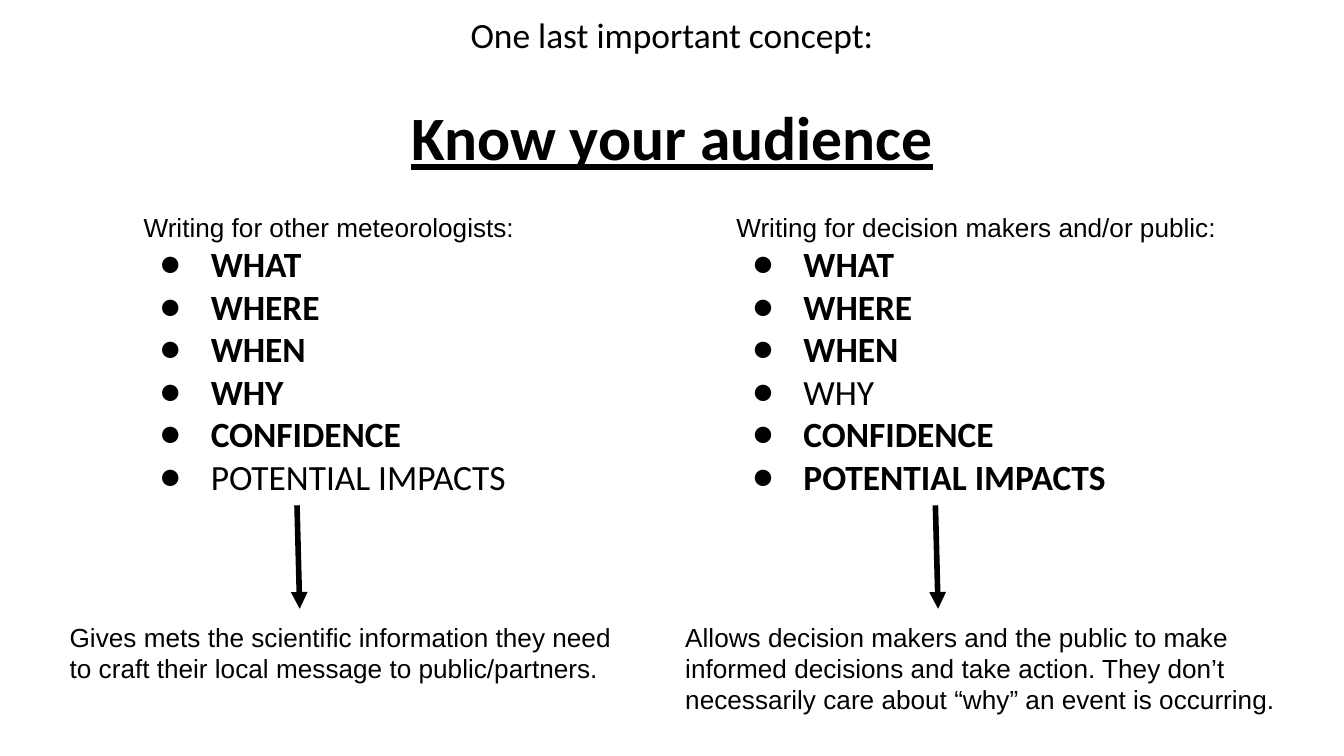
from lxml import etree
from pptx import Presentation
from pptx import util as u
from pptx.dml.color import RGBColor
from pptx.enum import shapes, text
from pptx.oxml.ns import qn

PX = 9144  # EMU per px, 100 px to the inch
SLIDE_W = 1000
BLACK = "000000"
BODY = dict(name="Arial", size=u.Pt(14), bold=False)
ITEM = dict(name="Calibri", size=u.Pt(19))
HEADLINE = dict(name="Calibri", size=u.Pt(33), bold=True, underline=True)

TOPICS = ["WHAT", "WHERE", "WHEN", "WHY", "CONFIDENCE", "POTENTIAL IMPACTS"]
# heading, topic left plain, list (left, width), arrow x, outcome, outcome (left, width, height)
AUDIENCES = [
    ("Writing for other meteorologists:", "POTENTIAL IMPACTS", (97, 347), 221,
     "Gives mets the scientific information they need to craft their local "
     "message to public/partners.", (42, 440, 67)),
    ("Writing for decision makers and/or public:", "WHY", (538, 409), 696,
     "Allows decision makers and the public to make informed decisions and "
     "take action. They don’t necessarily care about “why” an event is "
     "occurring.", (500, 471, 91)),
]


def px(n):
    return u.Emu(n * PX)


def color(hex_value):
    return RGBColor.from_string(hex_value)


def set_attrs(target, values):
    for name, value in values.items():
        setattr(target, name, value)


def set_frame(sp):
    tf = sp.text_frame
    margins = {f"margin_{side}": px(10) for side in ("left", "top", "right", "bottom")}
    set_attrs(tf, dict(margins, word_wrap=True, vertical_anchor=text.MSO_ANCHOR.TOP,
                       auto_size=text.MSO_AUTO_SIZE.SHAPE_TO_FIT_TEXT))
    return tf


def add_box(s, x, y, w, h):
    return set_frame(s.shapes.add_textbox(px(x), px(y), px(w), px(h)))


def write(p, words, font):
    r = p.add_run()
    r.text = words
    set_attrs(r.font, font)
    r.font.color.rgb = color(BLACK)


def add_bullet(p):
    pPr = p._p.get_or_add_pPr()
    pPr.set("marL", str(px(50)))
    pPr.set("indent", str(px(-38)))
    bu_color = etree.SubElement(pPr, qn("a:buClr"))
    etree.SubElement(bu_color, qn("a:srgbClr"), val=BLACK)
    etree.SubElement(pPr, qn("a:buFont"), typeface="Calibri")
    etree.SubElement(pPr, qn("a:buChar"), char="●")


def add_title(s):
    sp = s.shapes.title
    set_attrs(sp, dict(left=px(0), top=px(0), width=px(SLIDE_W), height=px(140)))
    tf = set_frame(sp)
    intro, headline = tf.paragraphs[0], tf.add_paragraph()
    write(intro, "One last important concept:", ITEM)
    write(headline, "Know your audience", HEADLINE)
    headline.space_before = u.Pt(23)
    for p in tf.paragraphs:
        p.alignment = text.PP_ALIGN.CENTER


def add_topic_list(s, x, w, heading, plain_topic):
    tf = add_box(s, x, 147, w, 236)
    write(tf.paragraphs[0], heading, BODY)
    for topic in TOPICS:
        p = tf.add_paragraph()
        add_bullet(p)
        write(p, topic, dict(ITEM, bold=topic != plain_topic))


def add_arrow(s, x):
    arrow = s.shapes.add_connector(shapes.MSO_CONNECTOR.STRAIGHT,
                                   px(x), px(376), px(x + 2), px(453))
    arrow.line.width = u.Pt(3)
    arrow.line.color.rgb = color(BLACK)
    etree.SubElement(arrow.line._get_or_add_ln(), qn("a:tailEnd"), type="triangle")
    etree.SubElement(arrow._element.spPr, qn("a:effectLst"))


def add_outcome(s, x, w, h, words):
    write(add_box(s, x, 452, w, h).paragraphs[0], words, BODY)


def main():
    prs = Presentation()
    prs.slide_width = px(SLIDE_W)
    prs.slide_height = px(SLIDE_W) * 9 // 16
    s = prs.slides.add_slide(prs.slide_layouts[5])
    add_title(s)
    for heading, plain, list_place, arrow_x, outcome, outcome_place in AUDIENCES:
        add_topic_list(s, *list_place, heading, plain)
        add_arrow(s, arrow_x)
        add_outcome(s, *outcome_place, outcome)
    prs.save("out.pptx")


if __name__ == "__main__":
    main()
